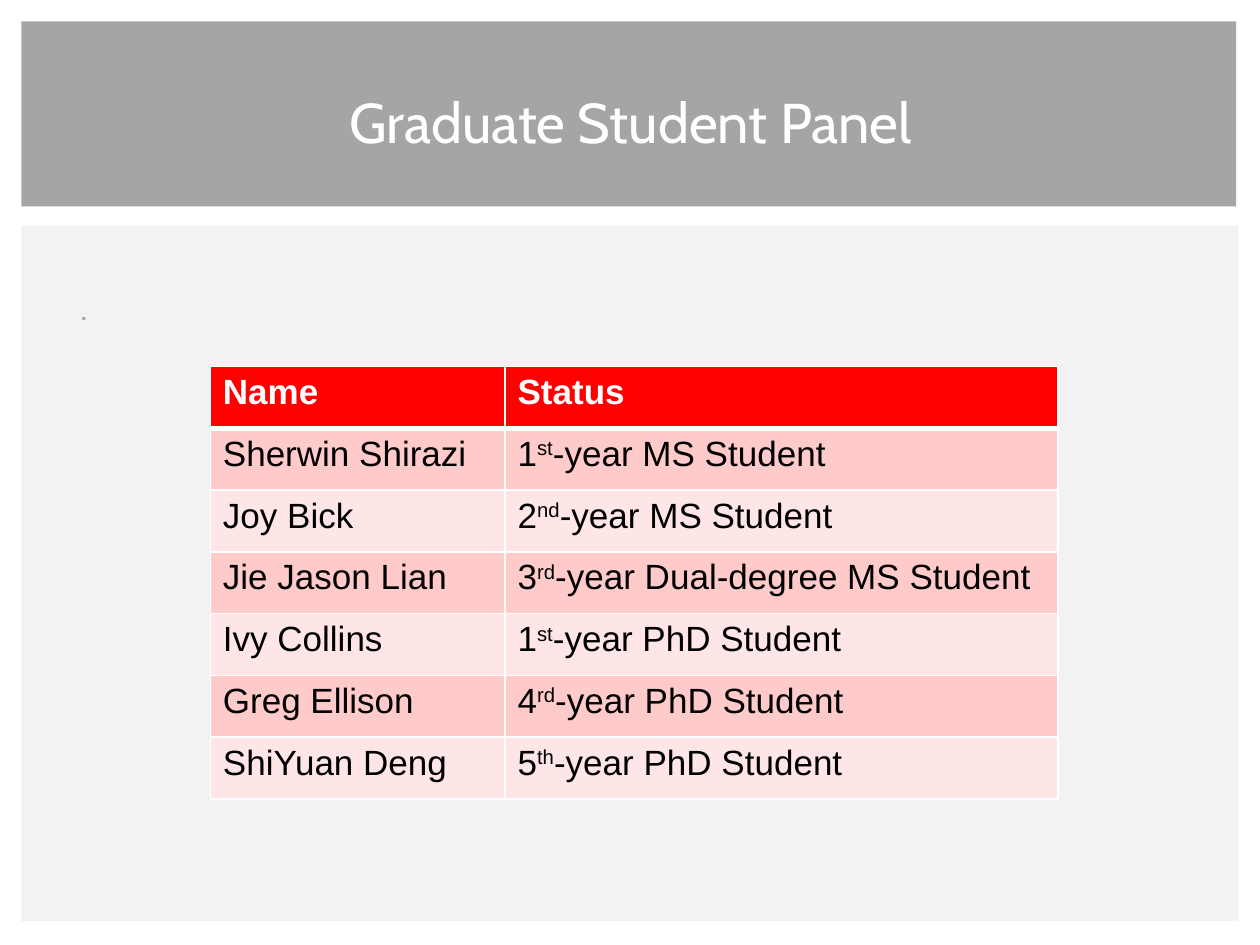
from lxml.etree import SubElement as Sub
from pptx import Presentation
from pptx.dml.color import RGBColor
from pptx.enum.shapes import MSO_SHAPE as Kind
from pptx.enum.text import MSO_ANCHOR as Anchor, PP_ALIGN as Align
from pptx.oxml.ns import qn
from pptx.util import Cm, Pt

WHITE = RGBColor(0xFF, 0xFF, 0xFF)
BLACK = RGBColor(0, 0, 0)
GRAY = RGBColor(0xA5, 0xA5, 0xA5)
PALE = RGBColor(0xF2, 0xF2, 0xF2)
RED = RGBColor(0xFF, 0, 0)
PINK = RGBColor(0xFF, 0xCA, 0xCA)
BLUSH = RGBColor(0xFF, 0xE6, 0xE6)

HEADS = ("Name", "Status")
PANEL = (
    ("Sherwin Shirazi", "1", "st", "-year MS Student"),
    ("Joy Bick", "2", "nd", "-year MS Student"),
    ("Jie Jason Lian", "3", "rd", "-year Dual-degree MS Student"),
    ("Ivy Collins", "1", "st", "-year PhD Student"),
    ("Greg Ellison", "4", "rd", "-year PhD Student"),
    ("ShiYuan Deng", "5", "th", "-year PhD Student"),
)


class Page:
    title_font = "Cabin"
    table_font = "Arial"
    size = 20

    def __init__(self, slide):
        self.slide = slide
        self.shapes = slide.shapes

    def style(self, run, font, size, color, bold=False):
        run.font.name = font
        run.font.size = Pt(size)
        run.font.color.rgb = color
        run.font.bold = bold

    def block(self, box, color):
        shape = self.shapes.add_shape(Kind.RECTANGLE, *map(Cm, box))
        shape.shadow.inherit = False
        shape.fill.solid()
        shape.fill.fore_color.rgb = color
        shape.line.fill.background()

    def text(self, box, words, size, color, anchor=Anchor.TOP, align=Align.LEFT):
        frame = self.shapes.add_textbox(*map(Cm, box)).text_frame
        frame.word_wrap = True
        frame.vertical_anchor = anchor
        frame.text = words
        para = frame.paragraphs[0]
        para.alignment = align
        self.style(para.runs[0], self.title_font, size, color)
        return para

    def borders(self, cell, top, bottom):
        props = cell._tc.get_or_add_tcPr()
        widths = {"lnL": 1, "lnR": 1, "lnT": top, "lnB": bottom}
        for spot, (tag, width) in enumerate(widths.items()):
            line = Sub(props, qn("a:" + tag), w=str(Pt(width)))
            Sub(Sub(line, qn("a:solidFill")), qn("a:srgbClr"), val=str(WHITE))
            props.insert(spot, line)

    def cell(self, cell, parts, fill, color, bold, top, bottom):
        cell.fill.solid()
        cell.fill.fore_color.rgb = fill
        self.borders(cell, top, bottom)
        para = cell.text_frame.paragraphs[0]
        for spot, part in enumerate(parts):
            run = para.add_run()
            run.text = part
            self.style(run, self.table_font, self.size, color, bold)
            if spot == 1:
                run._r.get_or_add_rPr().set("baseline", "30000")

    def table(self, box, widths, heads, people):
        rows = len(people) + 1
        grid = self.shapes.add_table(rows, len(heads), *map(Cm, box)).table
        for col, width in zip(grid.columns, widths):
            col.width = Cm(width)
        for row in grid.rows:
            row.height = Cm(box[3] / rows)
        for col, head in enumerate(heads):
            self.cell(grid.cell(0, col), [head], RED, WHITE, True, 1, 3)
        for row, (name, *status) in enumerate(people, 1):
            fill = PINK if row % 2 else BLUSH
            top = 3 if row == 1 else 1
            for col, parts in enumerate(([name], status)):
                self.cell(grid.cell(row, col), parts, fill, BLACK, False, top, 1)


def main():
    deck = Presentation()
    deck.slide_width, deck.slide_height = Cm(25.4), Cm(19.05)
    page = Page(deck.slides.add_slide(deck.slide_layouts[6]))
    page.block((0.43, 4.55, 24.54, 14.02), PALE)
    page.block((0.43, 0.43, 24.49, 3.73), GRAY)
    body = page.text((1.07, 5.64, 23.34, 11.38), ".", 20, GRAY)
    body.space_before = Pt(3.6)
    body._p.get_or_add_pPr().set("marL", str(Cm(0.3)))
    page.text((1.07, 0.99, 23.29, 2.92), "Graduate Student Panel", 32, WHITE,
              Anchor.MIDDLE, Align.CENTER)
    page.table((4.24, 7.39, 17.09, 8.72), (5.94, 11.15), HEADS, PANEL)
    deck.save("out.pptx")


if __name__ == "__main__":
    main()
